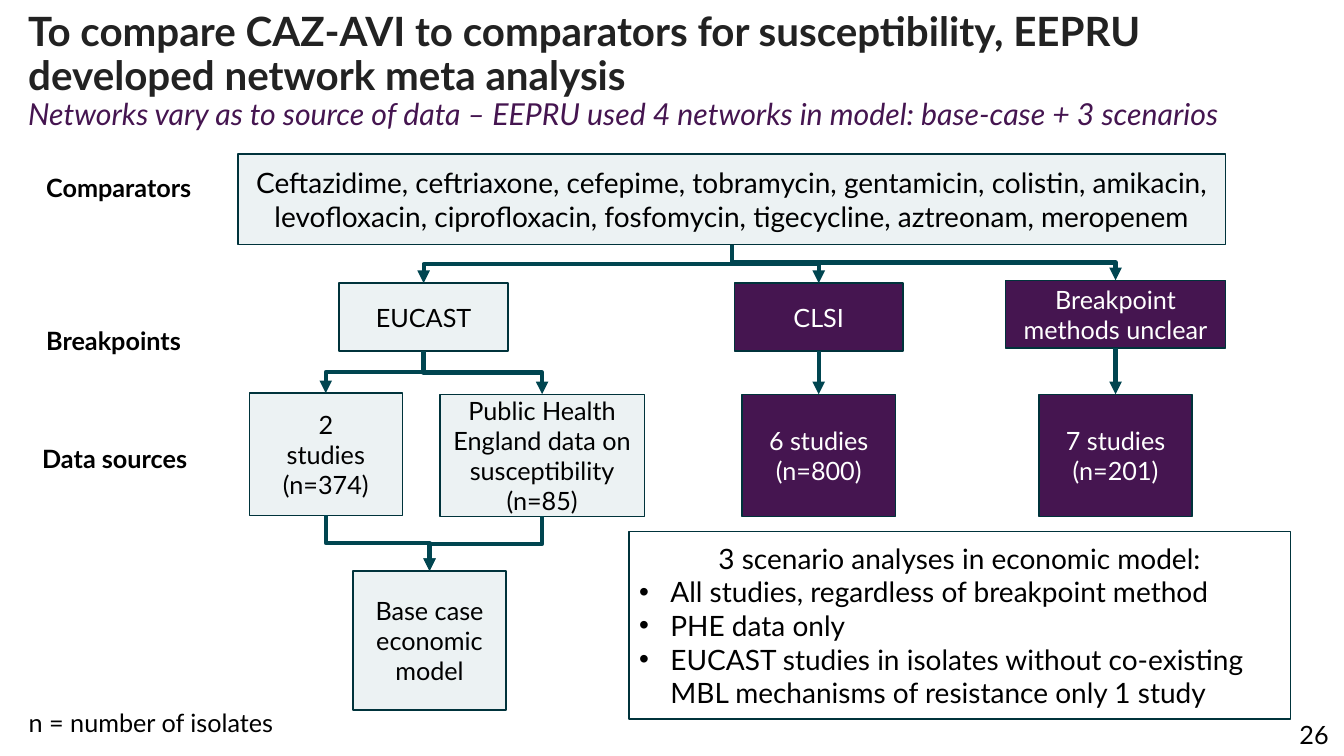
from dataclasses import dataclass

from lxml import etree
from pptx import Presentation
from pptx.dml.color import RGBColor
from pptx.enum.shapes import MSO_CONNECTOR, MSO_SHAPE
from pptx.enum.text import MSO_ANCHOR, MSO_AUTO_SIZE, PP_ALIGN
from pptx.oxml.ns import qn
from pptx.util import Inches, Pt

ELBOW, STRAIGHT = MSO_CONNECTOR.ELBOW, MSO_CONNECTOR.STRAIGHT
RECTANGLE = MSO_SHAPE.RECTANGLE
TOP, MIDDLE = MSO_ANCHOR.TOP, MSO_ANCHOR.MIDDLE
LEFT, CENTER, RIGHT = PP_ALIGN.LEFT, PP_ALIGN.CENTER, PP_ALIGN.RIGHT
NO_AUTOFIT = MSO_AUTO_SIZE.NONE
TOP_SITE, BOTTOM_SITE = 0, 2

FONT = "Lato"
BLACK, WHITE, CHARCOAL = "000000", "FFFFFF", "222222"
PURPLE, PALE, OUTLINE, ARROW = "451550", "ECF2F3", "00333B", "004550"


@dataclass
class Area:
    left: float
    top: float
    width: float
    height: float

    def share(self, left, top, width, height):
        """Return a sub-area given in percent of this one."""
        return Area(self.left + self.width * left / 100,
                    self.top + self.height * top / 100,
                    self.width * width / 100,
                    self.height * height / 100)

    def lengths(self):
        return [Inches(value) for value in
                (self.left, self.top, self.width, self.height)]


def color(hex_code):
    return RGBColor.from_string(hex_code)


def style_run(run, size, hex_code, bold=False, italic=False):
    font = run.font
    font.name, font.size, font.bold, font.italic = FONT, Pt(size), bold, italic
    font.color.rgb = color(hex_code)


def write(shape, text, size=18, hex_code=BLACK, align=LEFT, anchor=TOP, bold=False):
    frame = shape.text_frame
    frame.text = text
    frame.word_wrap = True
    frame.auto_size = NO_AUTOFIT
    frame.vertical_anchor = anchor
    for paragraph in frame.paragraphs:
        paragraph.alignment = align
        for run in paragraph.runs:
            style_run(run, size, hex_code, bold)


def paint(shape, fill):
    shape.fill.solid()
    shape.fill.fore_color.rgb = color(fill)
    shape.line.color.rgb = color(OUTLINE)
    shape.line.width = Pt(1)


def place(shape, area):
    shape.left, shape.top, shape.width, shape.height = area.lengths()


def add_text(slide, area, text, **style):
    write(slide.shapes.add_textbox(*area.lengths()), text, **style)


def add_box(slide, area, text, fill=PALE, size=18):
    box = slide.shapes.add_shape(RECTANGLE, *area.lengths())
    box.shadow.inherit = False
    paint(box, fill)
    write(box, text, size, WHITE if fill == PURPLE else BLACK, CENTER, MIDDLE)
    return box


def turn_downwards(connector, start, end):
    """Make an elbow leave and arrive vertically."""
    start_x, end_x = (box.left + box.width // 2 for box in (start, end))
    start_y, end_y = start.top + start.height, end.top
    drop, shift = end_y - start_y, abs(end_x - start_x)
    connector.left = (start_x + end_x - drop) // 2
    connector.top = (start_y + end_y - shift) // 2
    connector.width, connector.height = drop, shift
    frame = connector._element.spPr.find(qn("a:xfrm"))
    for name in ("flipH", "flipV"):
        frame.attrib.pop(name, None)
    if end_x > start_x:
        frame.set("rot", "16200000")
        frame.set("flipH", "1")
    else:
        frame.set("rot", "5400000")


def add_arrow(slide, start, end, kind=ELBOW):
    connector = slide.shapes.add_connector(kind, 0, 0, 0, 0)
    connector.begin_connect(start, BOTTOM_SITE)
    connector.end_connect(end, TOP_SITE)
    if kind == ELBOW:
        turn_downwards(connector, start, end)
    connector.line.color.rgb = color(ARROW)
    connector.line.width = Pt(3)
    properties = connector._element.spPr
    etree.SubElement(properties.find(qn("a:ln")), qn("a:tailEnd"), type="triangle")
    etree.SubElement(properties, qn("a:effectLst"))


def fill_title(slide, area):
    title = slide.shapes.title
    place(title, area)
    write(title, "To compare CAZ-AVI to comparators for susceptibility, EEPRU "
          "developed network meta analysis\vNetworks vary as to source of data – "
          "EEPRU used 4 networks in model: base-case + 3 scenarios",
          28.8, CHARCOAL, bold=True)
    paragraph = title.text_frame.paragraphs[0]
    paragraph.line_spacing = 0.9
    style_run(paragraph.runs[1], 21.6, PURPLE, italic=True)


def add_row_labels(slide, area):
    for text, left, top in (("Comparators", 2.3, 2.4),
                            ("Breakpoints", 2.3, 29.9),
                            ("Data sources", 0, 51.2)):
        add_text(slide, area.share(left, top, 97.7, 6.9), text, bold=True)


def add_network(slide, area):
    def node(text, center, top, width, height, fill=PALE, size=18):
        return add_box(slide, area.share(center - width / 2, top, width, height),
                       text, fill, size)

    comparators = node(
        "Ceftazidime, ceftriaxone, cefepime, tobramycin, gentamicin, colistin, "
        "amikacin, levofloxacin, ciprofloxacin, fosfomycin, tigecycline, "
        "aztreonam, meropenem", 50, 0, 100, 16.3, size=20)
    eucast = node("EUCAST", 18.8, 23.2, 17.1, 12.2)
    clsi = node("CLSI", 58.8, 23.2, 17.1, 12.2, PURPLE)
    unclear = node("Breakpoint methods unclear", 88.85, 22.7, 22.3, 12.2, PURPLE)

    source_top, source_height = 43.2, 22
    eucast_studies = node("2\nstudies (n=374)", 8.9, 43, 15.5, source_height)
    health_data = node("Public Health England data on susceptibility\n(n=85)",
                       30.8, source_top, 20.7, source_height)
    clsi_studies = node("6 studies (n=800)", 58.8, source_top, 15.5,
                        source_height, PURPLE)
    unclear_studies = node("7 studies\n(n=201)", 88.85, source_top, 15.5,
                           source_height, PURPLE)
    base_case = node("Base case economic model", 19.4, 75, 15.5, 25)

    for start, end in ((comparators, eucast), (comparators, clsi),
                       (comparators, unclear), (eucast, eucast_studies),
                       (eucast, health_data), (eucast_studies, base_case),
                       (health_data, base_case)):
        add_arrow(slide, start, end)
    add_arrow(slide, clsi, clsi_studies, STRAIGHT)
    add_arrow(slide, unclear, unclear_studies, STRAIGHT)


def fill_scenarios(slide, area):
    body = slide.placeholders[1]
    place(body, area)
    paint(body, WHITE)
    write(body, "3 scenario analyses in economic model:\n"
          "All studies, regardless of breakpoint method\n"
          "PHE data only\n"
          "EUCAST studies in isolates without co-existing MBL mechanisms of "
          "resistance only 1 study", 20, anchor=MIDDLE)
    heading, *items = body.text_frame.paragraphs
    heading.alignment = CENTER
    for paragraph in (heading, *items):
        paragraph.space_before = Pt(0)
        indent = 0 if paragraph is heading else Inches(0.31)
        properties = paragraph._p.get_or_add_pPr()
        properties.set("marL", str(int(indent)))
        properties.set("indent", str(-int(indent)))
        if paragraph is heading:
            etree.SubElement(properties, qn("a:buNone"))
        else:
            etree.SubElement(properties, qn("a:buChar"), char="•")


def main():
    presentation = Presentation()
    page = Area(0, 0, 13.33, 7.5)
    presentation.slide_width = Inches(page.width)
    presentation.slide_height = Inches(page.height)
    slide = presentation.slides.add_slide(presentation.slide_layouts[1])
    fill_title(slide, page.share(1.35, 0.9, 93.8, 18.7))
    fill_scenarios(slide, page.share(46.8, 70.3, 49.2, 24.8))
    add_row_labels(slide, page.share(2.4, 20.4, 12.9, 73.5))
    add_network(slide, page.share(17.7, 20.4, 73.5, 73.5))
    add_text(slide, page.share(1.4, 92.9, 22.7, 5.3), "n = number of isolates")
    add_text(slide, page.share(85.8, 94.5, 13.8, 5.3), "26", align=RIGHT)
    presentation.save("out.pptx")


if __name__ == "__main__":
    main()
